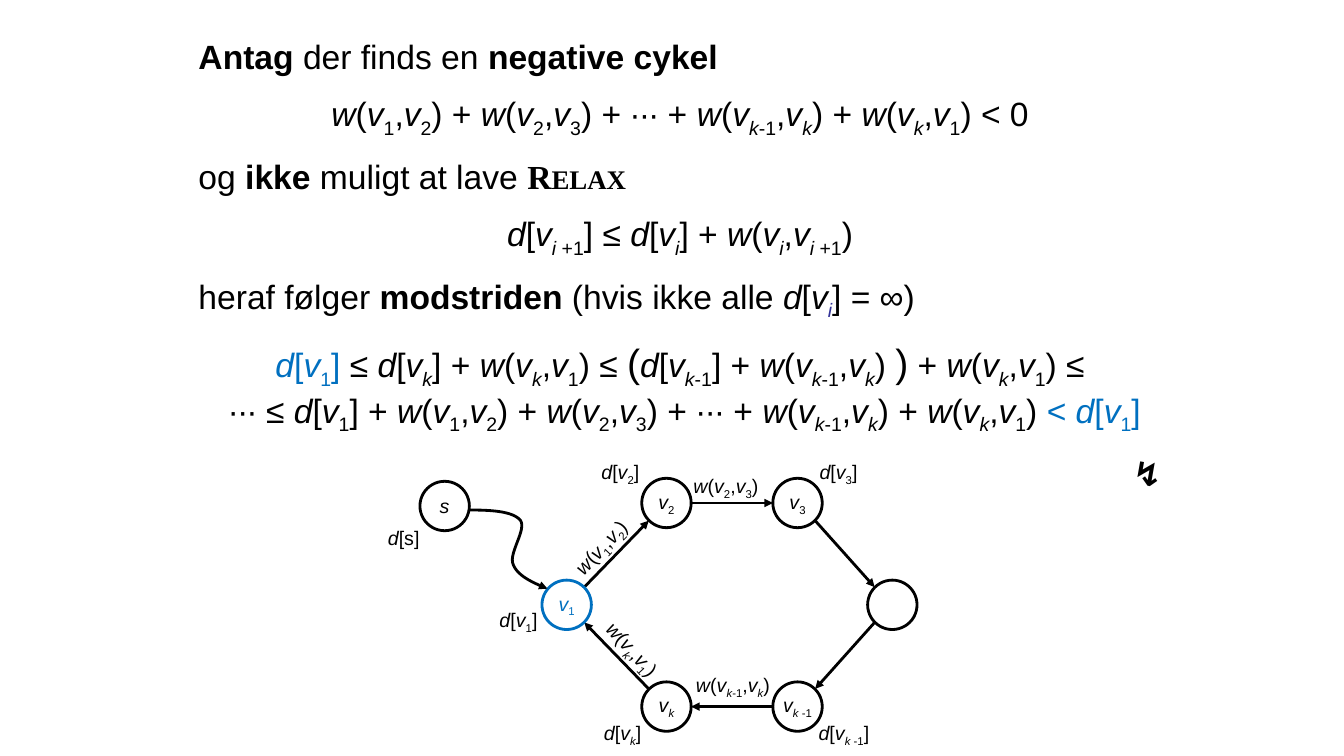
from lxml import etree
from pptx import Presentation
from pptx.dml.color import RGBColor
from pptx.enum.shapes import MSO_CONNECTOR, MSO_SHAPE
from pptx.enum.text import PP_ALIGN
from pptx.oxml.ns import qn
from pptx.util import Inches, Pt

LEFT, CENTER, RIGHT = PP_ALIGN.LEFT, PP_ALIGN.CENTER, PP_ALIGN.RIGHT
STRAIGHT, OVAL = MSO_CONNECTOR.STRAIGHT, MSO_SHAPE.OVAL
COLORS = {"ink": "000000", "accent": "0070C0", "index": "333399", "paper": "FFFFFF"}
MARKS = {"*": "bold", "/": "italic", "{": "sub", "}": "sub", "#": "accent",
         "%": "index", "^": "big", "@": "caps"}
RADIUS = 0.245
DIAGONAL = 0.175


def color(name):
    """Return a named colour of the slide."""
    return RGBColor.from_string(COLORS[name])


def v(index):
    """Mark up a vertex with its index."""
    return f"/v/{{{index}}}"


def d(index):
    """Mark up the distance of a vertex."""
    return f"/d/[{v(index)}]"


def w(start, end):
    """Mark up the weight of an edge."""
    return f"/w/({v(start)},{v(end)})"


K, LAST = "/k/", "/k/-1"
NEXT, BEFORE = "/i /+1", "/k /-1"
CYCLE = f"{w(1, 2)} + {w(2, 3)} + ∙∙∙ + {w(LAST, K)} + {w(K, 1)}"
PROOF = [
    ("*Antag *der finds en *negative cykel*", LEFT),
    (f"{CYCLE} < 0", CENTER),
    ("og *ikke *muligt at lave *@Relax@*", LEFT),
    (f"{d(NEXT)} ≤ {d('/i/')} + {w('/i/', NEXT)}", CENTER),
    (f"heraf følger *modstriden* (hvis ikke alle {d('%/i/%')} = ∞)", LEFT),
    (f"#{d(1)}# ≤ {d(K)} + {w(K, 1)} ≤ ^(^{d(LAST)} + {w(LAST, K)} ^)^ + {w(K, 1)} ≤"
     f"\n ∙∙∙ ≤ {d(1)} + {CYCLE} #< {d(1)}#", CENTER),
    ("*↯*", RIGHT),
]
NODES = {
    "s": (1.01, 0.52, "/s/"),
    "v1": (2.22, 1.5, f"#{v(1)}#"),
    "v2": (3.21, 0.49, v(2)),
    "v3": (4.51, 0.49, v(3)),
    "open": (5.45, 1.5, ""),
    "before": (4.51, 2.51, v(BEFORE)),
    "vk": (3.21, 2.51, v(K)),
}
RING = ["v1", "v2", "v3", "open", "before", "vk"]
PATH_START = (1.25, 0.56)
PATH_CURVES = [
    ((1.47, 0.56), (1.68, 0.57), (1.76, 0.66)),
    ((1.83, 0.75), (1.64, 0.99), (1.69, 1.1)),
    ((1.73, 1.21), (1.88, 1.28), (2.03, 1.34)),
]
LABELS = [
    (d(2), 2.14, 0.01, 0.9, RIGHT, 0),
    (d(3), 4.63, 0.01, 0.9, LEFT, 0),
    (d(K), 2.16, 2.6, 0.9, RIGHT, 0),
    (d(1), 1.13, 1.48, 0.9, RIGHT, 0),
    (d(BEFORE), 4.62, 2.6, 0.9, LEFT, 0),
    ("/d/[s]", -0.04, 0.67, 0.9, RIGHT, 0),
    (w(2, 3), 3.35, 0.15, 0.9, CENTER, 0),
    (w(LAST, K), 3.25, 2.13, 1.24, CENTER, 0),
    (w(1, 2), 2.11, 0.76, 0.9, CENTER, 313.6),
    (w(K, 1), 2.32, 1.77, 1.1, CENTER, 47.7),
]


def add_span(para, text, state, size):
    """Add one run formatted by the marks that are switched on."""
    span = para.add_run()
    span.text = text
    formats = {
        "name": "Times New Roman" if "caps" in state else "Arial",
        "size": Pt(28 if "big" in state else size),
        "bold": "bold" in state,
        "italic": "italic" in state,
    }
    for key, value in formats.items():
        setattr(span.font, key, value)
    tone = next((name for name in ("index", "accent") if name in state), "ink")
    span.font.color.rgb = color(tone)
    properties = span._r.get_or_add_rPr()
    if "sub" in state:
        properties.set("baseline", "-25000")
    if "caps" in state:
        properties.set("cap", "small")


def write(para, markup, size):
    """Write marked-up text into a paragraph."""
    state, text = set(), ""
    for sign in markup + "\0":
        if sign not in MARKS and sign not in "\n\0":
            text += sign
            continue
        if text:
            add_span(para, text, state, size)
            text = ""
        if sign in MARKS:
            state ^= {MARKS[sign]}
        elif sign == "\n":
            para.add_line_break()


def add_proof(page, box):
    """Write the proof paragraphs in the given box."""
    frame = page.shapes.add_textbox(*map(Inches, box)).text_frame
    frame.word_wrap = True
    for number, (markup, align) in enumerate(PROOF):
        para = frame.add_paragraph() if number else frame.paragraphs[0]
        para.alignment = align
        para.space_before = Pt(12)
        write(para, markup, 24)


def style_arrow(shape):
    """Give a line its colour, width and arrowhead."""
    shape.line.color.rgb = color("ink")
    shape.line.width = Pt(2)
    etree.SubElement(shape.line._get_or_add_ln(), qn("a:tailEnd"), type="triangle")


def add_edge(page, box, start, end):
    """Draw an arrow between the rims of two nodes."""
    x1, y1, _ = NODES[start]
    x2, y2, _ = NODES[end]
    reach = RADIUS if y1 == y2 else DIAGONAL
    step_x = reach * ((x2 > x1) - (x2 < x1))
    step_y = reach * ((y2 > y1) - (y2 < y1))
    left, top = box
    ends = (left + x1 + step_x, top + y1 + step_y, left + x2 - step_x, top + y2 - step_y)
    edge = page.shapes.add_connector(STRAIGHT, *map(Inches, ends))
    style_arrow(edge)
    etree.SubElement(edge._element.spPr, qn("a:effectLst"))


def add_path(page, box, steps=16):
    """Draw the winding arrow from the source to the cycle."""
    left, top = box
    points = [PATH_START]
    for curve in PATH_CURVES:
        corners = (points[-1], *curve)
        for step in range(1, steps + 1):
            t = step / steps
            weights = ((1 - t) ** 3, 3 * t * (1 - t) ** 2, 3 * t * t * (1 - t), t ** 3)
            points.append(tuple(sum(weight * corner[axis] for weight, corner in zip(weights, corners))
                                for axis in (0, 1)))
    places = [(Inches(left + x), Inches(top + y)) for x, y in points]
    builder = page.shapes.build_freeform(*places[0])
    builder.add_line_segments(places[1:], close=False)
    path = builder.convert_to_shape()
    path.shadow.inherit = False
    path.fill.background()
    style_arrow(path)


def add_node(page, box, x, y, markup):
    """Draw one round node around its centre."""
    place = (box[0] + x - RADIUS, box[1] + y - RADIUS, 2 * RADIUS, 2 * RADIUS)
    node = page.shapes.add_shape(OVAL, *map(Inches, place))
    node.shadow.inherit = False
    node.fill.solid()
    node.fill.fore_color.rgb = color("paper")
    node.line.color.rgb = color("accent" if "#" in markup else "ink")
    node.line.width = Pt(2)
    node.text_frame.margin_left = node.text_frame.margin_right = 0
    para = node.text_frame.paragraphs[0]
    para.alignment = CENTER
    write(para, markup, 14)


def add_graph(page, box):
    """Draw the cycle with its nodes, arrows and labels."""
    for start, end in zip(RING, RING[1:] + RING[:1]):
        add_edge(page, box, start, end)
    for node in NODES.values():
        add_node(page, box, *node)
    add_path(page, box)
    for markup, x, y, width, align, turn in LABELS:
        place = (box[0] + x, box[1] + y, width, 0.34)
        label = page.shapes.add_textbox(*map(Inches, place))
        label.rotation = turn
        label.text_frame.word_wrap = True
        para = label.text_frame.paragraphs[0]
        para.alignment = align
        write(para, markup, 14)


def main():
    """Build the slide and save it."""
    deck = Presentation()
    deck.slide_width, deck.slide_height = Inches(13.33), Inches(7.5)
    page = deck.slides.add_slide(deck.slide_layouts[6])
    add_proof(page, (1.87, 0.31, 9.75, 4.41))
    add_graph(page, (3.4, 4.5))
    deck.save("out.pptx")


if __name__ == "__main__":
    main()
